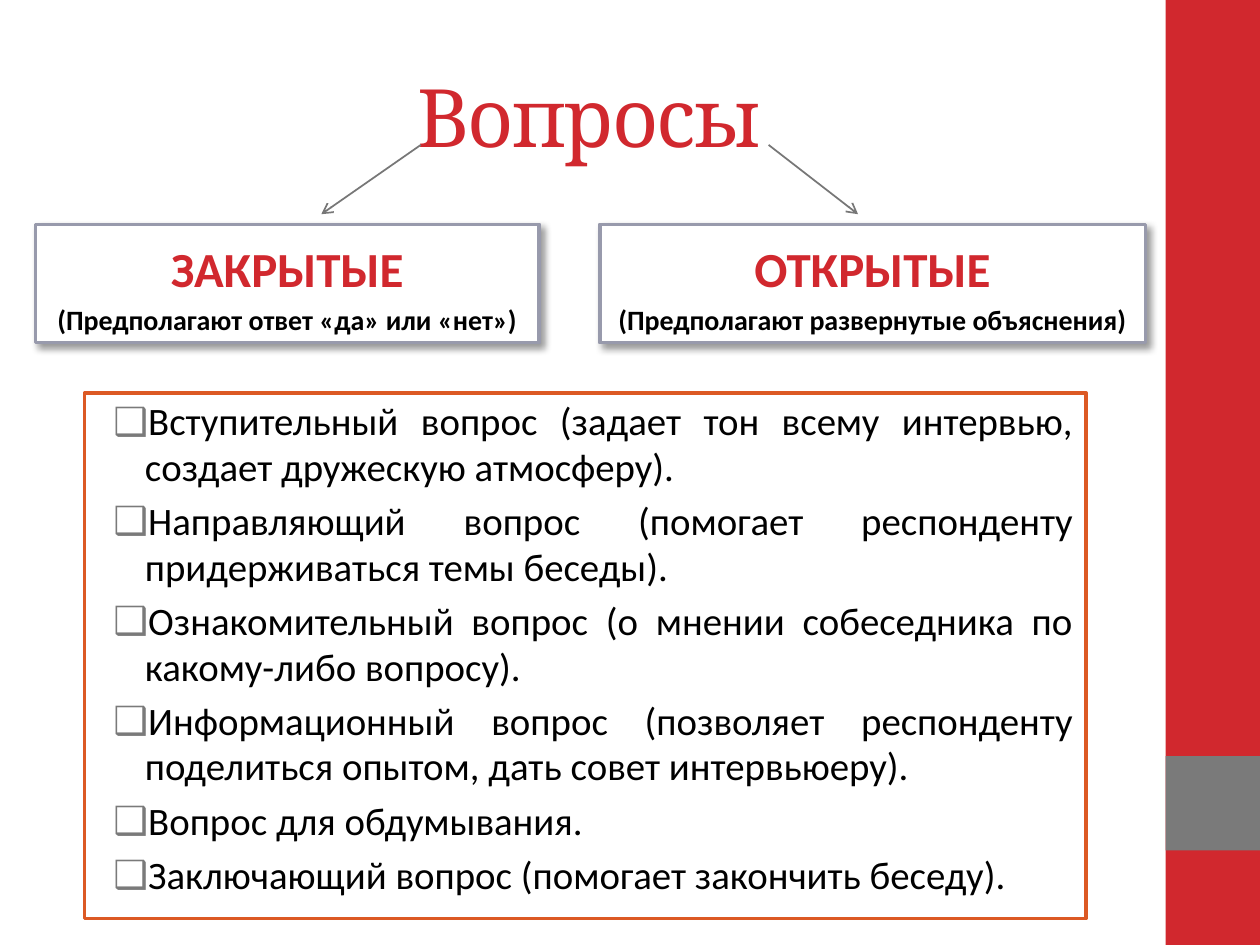
from lxml.etree import SubElement
from pptx import Presentation
from pptx.dml.color import RGBColor
from pptx.enum.shapes import MSO_CONNECTOR, MSO_SHAPE
from pptx.enum.text import MSO_ANCHOR, MSO_AUTO_SIZE, PP_ALIGN
from pptx.oxml.ns import qn
from pptx.util import Inches, Pt


class Theme:
    RED = RGBColor.from_string("D1282E")
    GRAY = RGBColor.from_string("7A7A7A")
    ARROW = RGBColor.from_string("777777")
    HEADING_BORDER = RGBColor.from_string("989AAC")
    LIST_BORDER = RGBColor.from_string("DC5924")
    WHITE = RGBColor.from_string("FFFFFF")
    BLACK = RGBColor.from_string("000000")
    TITLE = {"name": "Cambria", "size": Pt(46), "bold": False}
    HEADING = {"name": "Calibri", "size": Pt(28), "bold": True}
    NOTE = {"name": "Calibri", "size": Pt(16), "bold": True}
    ITEM = {"name": "Calibri", "size": Pt(22.2), "bold": False}


# Placeholder index, left, width, heading, note
HEADINGS = [
    (1, 0.28, 4, "ЗАКРЫТЫЕ", "(Предполагают ответ «да» или «нет»)"),
    (3, 4.76, 4.33, "ОТКРЫТЫЕ", "(Предполагают развернутые объяснения)"),
]
QUESTIONS = [
    "Вступительный вопрос (задает тон всему интервью, создает дружескую атмосферу).",
    "Направляющий вопрос (помогает респонденту придерживаться темы беседы).",
    "Ознакомительный вопрос (о мнении собеседника по какому-либо вопросу).",
    "Информационный вопрос (позволяет респонденту поделиться опытом, дать совет интервьюеру).",
    "Вопрос для обдумывания.",
    "Заключающий вопрос (помогает закончить беседу).",
]


def apply_format(target, values):
    for name, value in values.items():
        setattr(target, name, value)


def place(shape, left, top, width, height):
    apply_format(shape, {"left": Inches(left), "top": Inches(top),
                         "width": Inches(width), "height": Inches(height)})


def add_band(slide, top, height, color):
    band = slide.shapes.add_shape(MSO_SHAPE.RECTANGLE, Inches(9.25), Inches(top),
                                  Inches(0.75), Inches(height))
    band.shadow.inherit = False
    band.fill.solid()
    band.fill.fore_color.rgb = color
    band.line.fill.background()


def prepare_frame(shape, anchor):
    frame = shape.text_frame
    apply_format(frame, {"word_wrap": True, "auto_size": MSO_AUTO_SIZE.NONE,
                         "vertical_anchor": anchor})
    return frame


def add_border(shape, color):
    shape.fill.solid()
    shape.fill.fore_color.rgb = Theme.WHITE
    shape.line.color.rgb = color
    shape.line.width = Pt(2)
    shape.shadow.inherit = False


def add_shadow(shape):
    effects = shape.element.spPr.find(qn("a:effectLst"))
    shadow = SubElement(effects, qn("a:outerShdw"), blurRad=str(Pt(4)), dist=str(Pt(3)),
                        dir=str(45 * 60000), algn="tl", rotWithShape="0")
    color = SubElement(shadow, qn("a:srgbClr"), val=str(Theme.BLACK))
    SubElement(color, qn("a:alpha"), val="40000")


def write_line(frame, index, text, font, color, align, space_before=0):
    paragraph = frame.add_paragraph() if index else frame.paragraphs[0]
    apply_format(paragraph, {"alignment": align,
                             "space_before": Pt(space_before if index else 0)})
    run = paragraph.add_run()
    run.text = text
    apply_format(run.font, font)
    run.font.color.rgb = color
    return paragraph


def add_bullet(paragraph):
    properties = paragraph._p.get_or_add_pPr()
    properties.set("marL", str(Inches(0.38)))
    properties.set("indent", str(Inches(-0.25)))
    bullet_color = SubElement(properties, qn("a:buClr"))
    SubElement(bullet_color, qn("a:srgbClr"), val=str(Theme.GRAY))
    SubElement(properties, qn("a:buChar"), char="❑")


def fill_title(title):
    place(title, 0.51, 0.29, 8.33, 1.25)
    frame = prepare_frame(title, MSO_ANCHOR.MIDDLE)
    line = write_line(frame, 0, "Вопросы", Theme.TITLE, Theme.RED, PP_ALIGN.CENTER)
    line.runs[0].font._element.set("spc", "-100")


def fill_heading(box, left, width, heading, note):
    place(box, left, 1.78, width, 0.94)
    add_border(box, Theme.HEADING_BORDER)
    add_shadow(box)
    frame = prepare_frame(box, MSO_ANCHOR.BOTTOM)
    write_line(frame, 0, heading, Theme.HEADING, Theme.RED, PP_ALIGN.CENTER)
    write_line(frame, 1, note, Theme.NOTE, Theme.BLACK, PP_ALIGN.CENTER, 3.2)


def fill_questions(box):
    place(box, 0.67, 3.12, 7.95, 4.17)
    add_border(box, Theme.LIST_BORDER)
    frame = prepare_frame(box, MSO_ANCHOR.TOP)
    for index, question in enumerate(QUESTIONS):
        item = write_line(frame, index, question, Theme.ITEM, Theme.BLACK,
                          PP_ALIGN.JUSTIFY, 4.8)
        add_bullet(item)
        item.line_spacing = 0.98


def add_arrow(slide, start_x, end_x):
    arrow = slide.shapes.add_connector(MSO_CONNECTOR.STRAIGHT, Inches(start_x), Inches(1.15),
                                       Inches(end_x), Inches(1.7))
    arrow.line.color.rgb = Theme.ARROW
    arrow.line.width = Pt(1)
    SubElement(arrow.line._get_or_add_ln(), qn("a:tailEnd"), type="arrow")
    SubElement(arrow._element.spPr, qn("a:effectLst"))


def main():
    presentation = Presentation()
    apply_format(presentation, {"slide_width": Inches(10), "slide_height": Inches(7.5)})
    slide = presentation.slides.add_slide(presentation.slide_layouts.get_by_name("Comparison"))
    parts = {part.placeholder_format.idx: part for part in slide.placeholders}

    # Side band
    add_band(slide, 0, 7.5, Theme.RED)
    add_band(slide, 6, 0.75, Theme.GRAY)

    # Title, the two kinds of question and the list
    fill_title(slide.shapes.title)
    for index, left, width, heading, note in HEADINGS:
        fill_heading(parts[index], left, width, heading, note)
    fill_questions(parts[2])
    unused = parts[4].element
    unused.getparent().remove(unused)

    # Arrows from the title to both kinds
    for start_x, end_x in [(6.1, 6.81), (3.34, 2.55)]:
        add_arrow(slide, start_x, end_x)

    presentation.save("out.pptx")


if __name__ == "__main__":
    main()
